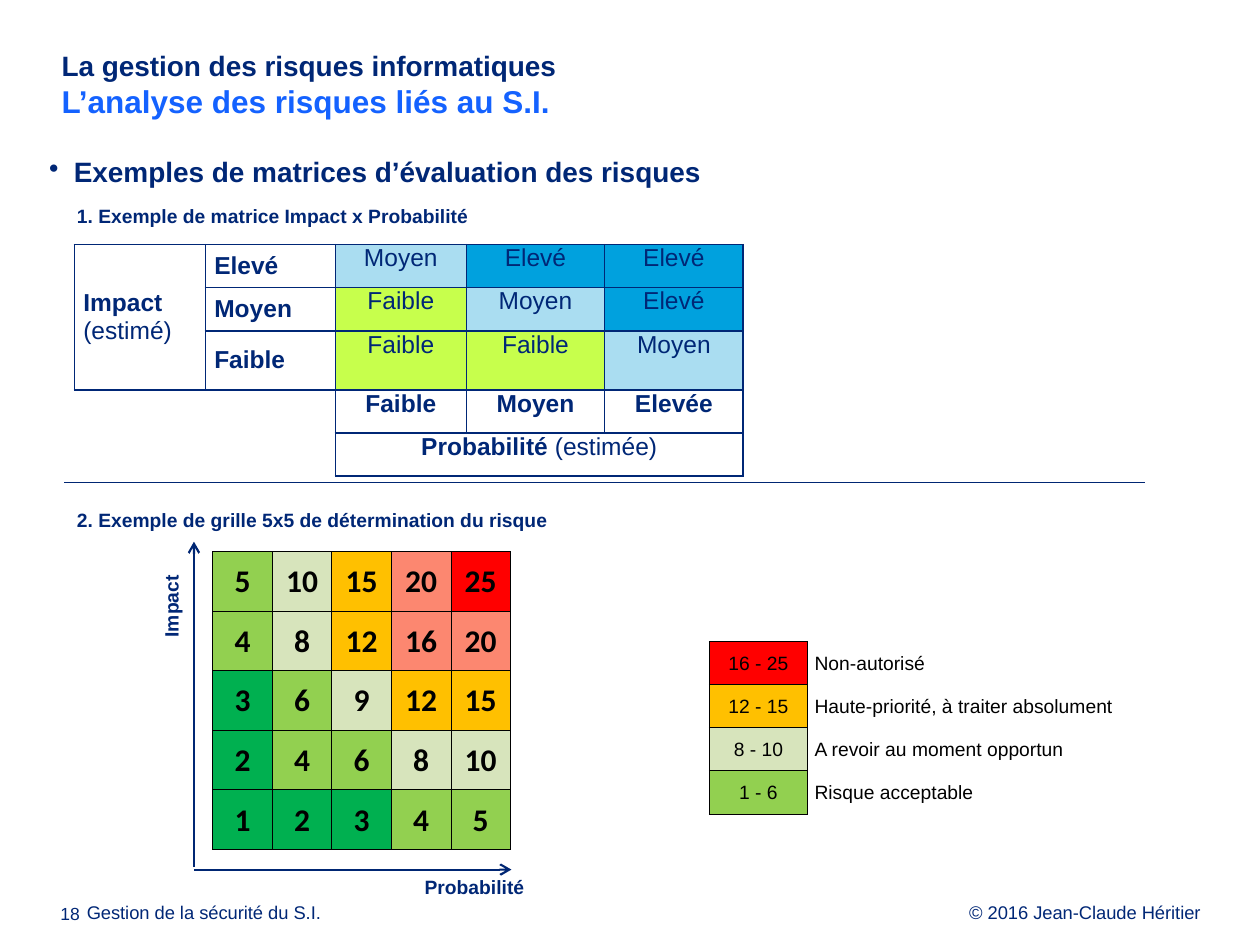
from dataclasses import dataclass

from lxml.etree import SubElement
from pptx import Presentation
from pptx.dml.color import RGBColor
from pptx.enum.shapes import MSO_CONNECTOR
from pptx.enum.text import MSO_ANCHOR, MSO_AUTO_SIZE, PP_ALIGN
from pptx.oxml.ns import qn
from pptx.util import Cm, Pt

COLORS = {
    "navy": "002776", "line": "002673", "blue": "1462FF", "black": "000000",
    "sky": "AADDF1", "azure": "00A1DE", "lime": "C7FF4C",
    "red": "FF0000", "salmon": "FC8770", "orange": "FFC000",
    "beige": "D7E4BC", "green": "92D050", "dark green": "00B050",
}
LEVEL_FILLS = {"Faible": "lime", "Moyen": "sky", "Elevé": "azure"}
# Lowest score of each band, from the most to the least severe
SCORE_BANDS = [(25, "red"), (16, "salmon"), (12, "orange"), (8, "beige"),
               (4, "green"), (1, "dark green")]
ALL_SIDES = "LRTB"


@dataclass(frozen=True)
class TextStyle:
    size: float
    color: str = "navy"
    bold: bool = False
    font: str = "Arial"


@dataclass(frozen=True)
class Label:
    text: str
    left: float
    top: float
    width: float
    rotation: int = 0


@dataclass(frozen=True)
class Footer:
    text: str
    left: float
    width: float
    size: float
    align: PP_ALIGN = PP_ALIGN.LEFT


@dataclass(frozen=True)
class Line:
    start: tuple
    end: tuple
    weight: float
    arrow: bool = False


@dataclass(frozen=True)
class CellLook:
    border: str
    border_weight: float
    margins: tuple
    anchor: MSO_ANCHOR = MSO_ANCHOR.MIDDLE
    align: PP_ALIGN = PP_ALIGN.LEFT


HEADING = TextStyle(11, bold=True)
LABELS = [
    Label("1. Exemple de matrice Impact x Probabilité", 1.3, 3.99, 8.43),
    Label("2. Exemple de grille 5x5 de détermination du risque", 1.3, 10.13, 10.16),
    Label("Probabilité", 8.31, 17.53, 2.54),
    Label("Impact", 2.57, 11.84, 1.78, rotation=270),
]
FOOTERS = [
    Footer("© 2016 Jean-Claude Héritier", 17.78, 6.43, 10.5, PP_ALIGN.RIGHT),
    Footer("Gestion de la sécurité du S.I.", 1.75, 6.43, 10.5),
    Footer("18", 1.22, 0.66, 10),
]
LINES = [
    Line((3.91, 17.53), (10.31, 17.53), 1.25, arrow=True),
    Line((3.91, 17.48), (3.91, 10.92), 1.25, arrow=True),
    Line((1.3, 9.73), (23.09, 9.73), 0.75),
]
LEGEND = [
    ("16 - 25", "Non-autorisé", "red"),
    ("12 - 15", "Haute-priorité, à traiter absolument", "orange"),
    ("8 - 10", "A revoir au moment opportun", "beige"),
    ("1 - 6", "Risque acceptable", "green"),
]


def rgb(name: str) -> RGBColor:
    return RGBColor.from_string(COLORS[name])


def style_run(run, style: TextStyle) -> None:
    font = run.font
    font.size, font.bold, font.name = Pt(style.size), style.bold, style.font
    font.color.rgb = rgb(style.color)


def style_frame(frame, style: TextStyle, align=PP_ALIGN.LEFT) -> None:
    for paragraph in frame.paragraphs:
        paragraph.alignment = align
        for run in paragraph.runs:
            style_run(run, style)


def set_margins(holder, left: float, top: float, right: float, bottom: float) -> None:
    holder.margin_left, holder.margin_top = Cm(left), Cm(top)
    holder.margin_right, holder.margin_bottom = Cm(right), Cm(bottom)


def add_text(slide, text: str, left, top, width, height):
    box = slide.shapes.add_textbox(Cm(left), Cm(top), Cm(width), Cm(height))
    box.text_frame.text = text
    return box


def add_title(slide) -> None:
    title = slide.shapes.title
    title.left, title.top, title.width, title.height = Cm(1.14), Cm(0.97), Cm(23.39), Cm(1.75)
    frame = title.text_frame
    frame.auto_size, frame.vertical_anchor = MSO_AUTO_SIZE.NONE, MSO_ANCHOR.TOP
    set_margins(frame, 0.1, 0, 0, 0)
    frame.paragraphs[0].text = "La gestion des risques informatiques\vL’analyse des risques liés au S.I."
    style_frame(frame, TextStyle(16, bold=True))
    style_run(frame.paragraphs[0].runs[1], TextStyle(18, "blue", True))


def add_topic(slide) -> None:
    topic = add_text(slide, "Exemples de matrices d’évaluation des risques", 0.89, 3.12, 23.39, 14.71)
    frame = topic.text_frame
    frame.word_wrap = True
    set_margins(frame, 0.1, 0, 0, 0)
    style_frame(frame, TextStyle(16, bold=True))
    properties = frame.paragraphs[0]._p.get_or_add_pPr()
    properties.set("marL", str(Cm(0.5)))
    properties.set("indent", str(-Cm(0.5)))
    SubElement(properties, qn("a:buChar"), char="•")


def add_footer(slide, footer: Footer) -> None:
    frame = add_text(slide, footer.text, footer.left, 18.24, footer.width, 0.41).text_frame
    frame.word_wrap = True
    set_margins(frame, 0, 0, 0, 0)
    style_frame(frame, TextStyle(footer.size), footer.align)
    frame.paragraphs[0].line_spacing = Pt(10.8)


def add_label(slide, label: Label) -> None:
    box = add_text(slide, label.text, label.left, label.top, label.width, 0.74)
    box.rotation = label.rotation
    box.text_frame.word_wrap = False
    box.text_frame.auto_size = MSO_AUTO_SIZE.SHAPE_TO_FIT_TEXT
    style_frame(box.text_frame, HEADING)


def add_line(slide, line: Line) -> None:
    connector = slide.shapes.add_connector(
        MSO_CONNECTOR.STRAIGHT, *map(Cm, line.start), *map(Cm, line.end))
    connector.line.color.rgb, connector.line.width = rgb("line"), Pt(line.weight)
    if line.arrow:
        SubElement(connector.line._get_or_add_ln(), qn("a:tailEnd"), type="arrow")
    SubElement(connector._element.spPr, qn("a:effectLst"))


def add_plain_table(slide, left: float, top: float, widths: list, heights: list):
    table = slide.shapes.add_table(len(heights), len(widths), Cm(left), Cm(top),
                                   Cm(sum(widths)), Cm(sum(heights))).table
    table.first_row = table.horz_banding = False
    for column, width in zip(table.columns, widths):
        column.width = Cm(width)
    for row, height in zip(table.rows, heights):
        row.height = Cm(height)
    return table


def fill_cell(cell, text: str, style: TextStyle, look: CellLook, fill=None, sides=ALL_SIDES) -> None:
    """Write and format a cell, with borders on the given sides only."""
    cell.text_frame.text = text
    style_frame(cell.text_frame, style, look.align)
    set_margins(cell, *look.margins)
    cell.vertical_anchor = look.anchor
    properties = cell._tc.get_or_add_tcPr()
    for side in ALL_SIDES:
        border = SubElement(properties, qn(f"a:ln{side}"), w=str(Pt(look.border_weight)))
        if side in sides:
            paint = SubElement(border, qn("a:solidFill"))
            SubElement(paint, qn("a:srgbClr"), val=COLORS[look.border])
        else:
            SubElement(border, qn("a:noFill"))
    if fill:
        cell.fill.solid()
        cell.fill.fore_color.rgb = rgb(fill)
    else:
        cell.fill.background()


def add_level_matrix(slide) -> None:
    table = add_plain_table(slide, 1.5, 4.93, [2.64, 2.62, 2.64, 2.79, 2.79],
                            [0.87, 0.87, 1.19, 0.87, 0.87])
    margins = (0.18, 0, 0.18, 0)
    heading = CellLook("navy", 1, margins)
    centred = CellLook("navy", 1, margins, MSO_ANCHOR.TOP, PP_ALIGN.CENTER)
    plain, bold = TextStyle(14), TextStyle(14, bold=True)
    impacts = {"Elevé": ["Moyen", "Elevé", "Elevé"],
               "Moyen": ["Faible", "Moyen", "Elevé"],
               "Faible": ["Faible", "Faible", "Moyen"]}
    for row, (impact, levels) in enumerate(impacts.items()):
        fill_cell(table.cell(row, 0), "" if row else "Impact\n(estimé)", bold, heading)
        fill_cell(table.cell(row, 1), impact, bold, heading)
        for column, level in enumerate(levels, 2):
            fill_cell(table.cell(row, column), level, plain, centred, LEVEL_FILLS[level])
    for column, probability in enumerate(["Faible", "Moyen", "Elevée"], 2):
        fill_cell(table.cell(3, column), probability, bold, centred)
        fill_cell(table.cell(4, column), "Probabilité" if column == 2 else "", bold, centred)
    for row, column, sides in [(3, 0, "T"), (3, 1, "TR"), (4, 0, ""), (4, 1, "R")]:
        fill_cell(table.cell(row, column), "", plain, heading, sides=sides)
    style_run(table.cell(0, 0).text_frame.paragraphs[1].runs[0], plain)
    estimate = table.cell(4, 2).text_frame.paragraphs[0].add_run()
    estimate.text = " (estimée)"
    style_run(estimate, plain)
    table.cell(0, 0).merge(table.cell(2, 0))
    table.cell(4, 2).merge(table.cell(4, 4))


def add_score_grid(slide) -> None:
    table = add_plain_table(slide, 4.29, 11.12, [1.2] * 5, [1.2] * 5)
    look = CellLook("black", 0.5, (0.03, 0.03, 0.03, 0), align=PP_ALIGN.CENTER)
    style = TextStyle(18, "black", True, "Calibri")
    for row, impact in enumerate(range(5, 0, -1)):
        for column in range(5):
            score = impact * (column + 1)
            fill = next(color for lowest, color in SCORE_BANDS if score >= lowest)
            fill_cell(table.cell(row, column), str(score), style, look, fill)


def add_legend(slide) -> None:
    table = add_plain_table(slide, 14.3, 12.93, [1.98, 7.62], [0.87] * len(LEGEND))
    band = CellLook("black", 0.5, (0.03, 0.03, 0.03, 0), align=PP_ALIGN.CENTER)
    meaning_look = CellLook("black", 0.5, (0.14, 0.03, 0.03, 0))
    style = TextStyle(11, "black")
    for row, (scores, meaning, fill) in enumerate(LEGEND):
        fill_cell(table.cell(row, 0), scores, style, band, fill)
        fill_cell(table.cell(row, 1), meaning, style, meaning_look, sides="L")


def main() -> None:
    deck = Presentation()
    deck.slide_width, deck.slide_height = Cm(25.4), Cm(19.05)
    slide = deck.slides.add_slide(deck.slide_layouts[5])
    add_title(slide)
    add_topic(slide)
    for footer in FOOTERS:
        add_footer(slide, footer)
    add_score_grid(slide)
    add_legend(slide)
    add_level_matrix(slide)
    for label in LABELS:
        add_label(slide, label)
    for line in LINES:
        add_line(slide, line)
    deck.save("out.pptx")


if __name__ == "__main__":
    main()
